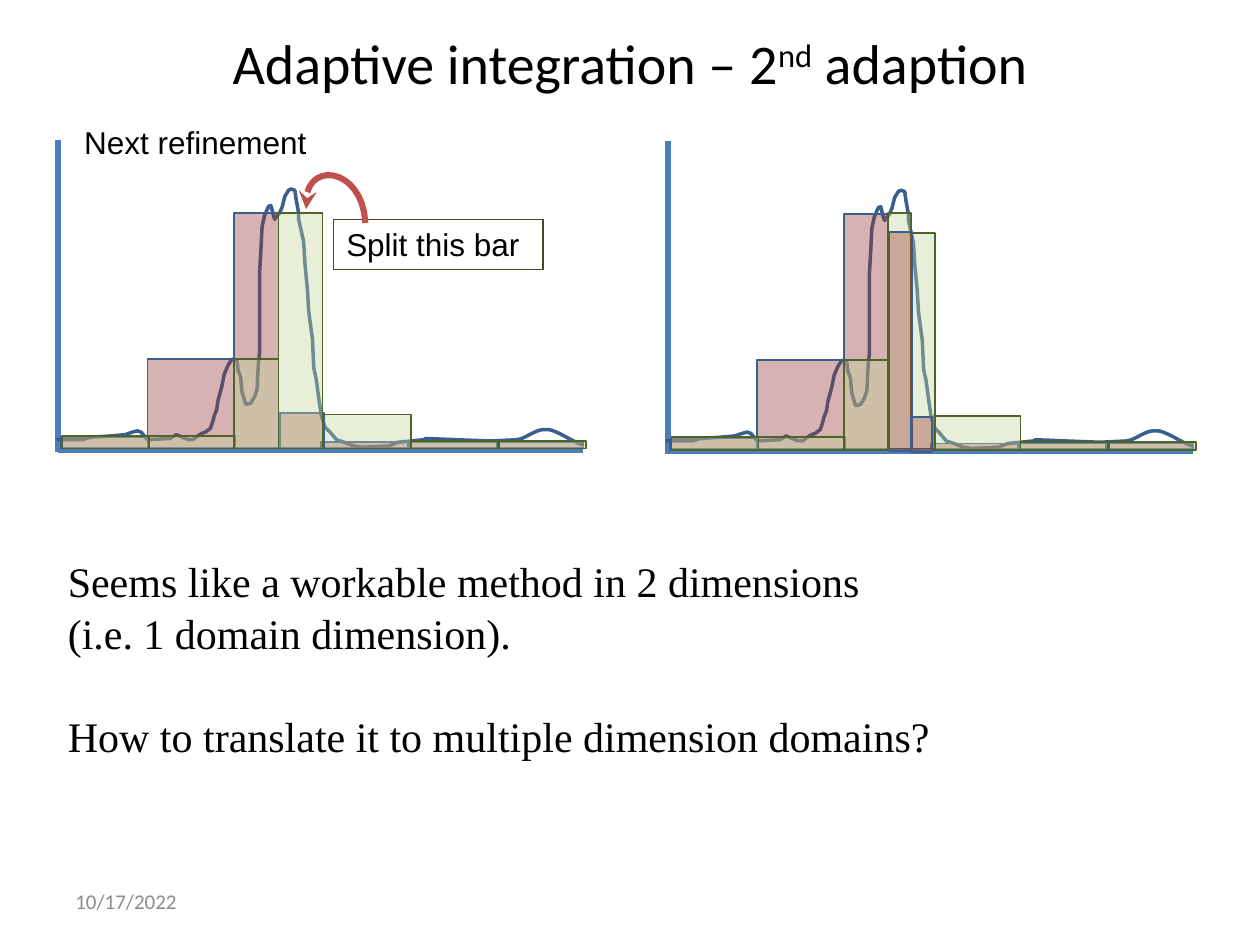
from dataclasses import dataclass
from lxml import etree
from pptx import Presentation
from pptx.dml.color import RGBColor
from pptx.enum import shapes as sh, text as tx
from pptx.oxml.ns import qn
from pptx.util import Inches, Pt

BLACK = RGBColor(0x00, 0x00, 0x00)
GREY = RGBColor(0x8C, 0x8C, 0x8C)
BROWN = RGBColor(0x4A, 0x45, 0x2A)
AXIS = RGBColor(0x4B, 0x7E, 0xBC)
BLUE = RGBColor(0x3A, 0x5F, 0x8C)
RED = RGBColor(0x95, 0x37, 0x35)
LIME = RGBColor(0xC3, 0xD6, 0x9B)
OLIVE = RGBColor(0x4F, 0x62, 0x28)
CORAL = RGBColor(0xC0, 0x50, 0x4D)

Point = tuple[float, float]


@dataclass
class Run:
    text: str
    lift: int = 0


@dataclass
class Bar:
    left: float
    top: float
    width: float
    height: float
    fill: RGBColor

    @property
    def edge(self) -> RGBColor:
        return BLUE if self.fill == RED else OLIVE


WIDE, HALF, SLIM = 0.69, 0.35, 0.18
BARS = [
    Bar(0.48, 3.47, WIDE, 0.09, RED),
    Bar(1.17, 2.85, WIDE, 0.71, RED),
    Bar(1.86, 1.69, HALF, 1.87, RED),
    *[Bar(x, 3.51, WIDE, 0.05, RED) for x in (2.55, 3.25, 3.94)],
    *[Bar(x, 3.46, WIDE, 0.1, LIME) for x in (0.49, 1.18)],
    Bar(1.86, 2.85, HALF, 0.71, LIME),
    Bar(2.57, 3.29, WIDE, 0.27, LIME),
    *[Bar(x, 3.5, WIDE, 0.06, LIME) for x in (3.26, 3.96)],
]
COARSE = [
    Bar(2.22, 3.28, HALF, 0.28, RED),
    Bar(2.21, 1.69, HALF, 1.87, LIME),
]
FINE = [
    Bar(7.24, 1.85, SLIM, 1.71, LIME),
    Bar(7.05, 1.69, SLIM, 1.87, LIME),
    Bar(7.06, 1.84, SLIM, 1.74, RED),
    Bar(7.23, 3.31, 0.17, 0.28, RED),
]


def bend(a: Point, b: Point, c: Point, d: Point, steps: int = 16) -> list[Point]:
    def mix(t: float, i: int) -> float:
        s = 1 - t
        return s**3 * a[i] + 3 * s * s * t * b[i] + 3 * s * t * t * c[i] + t**3 * d[i]

    return [(mix(n / steps, 0), mix(n / steps, 1)) for n in range(steps + 1)]


WAVE = [
    (0.44, 3.49), (0.65, 3.49), (0.72, 3.47), (0.88, 3.46), (0.99, 3.45),
    (1.05, 3.43), (1.09, 3.42), (1.12, 3.43), (1.17, 3.49), (1.35, 3.48),
    (1.4, 3.45), (1.47, 3.48), (1.5, 3.49), (1.53, 3.49), (1.57, 3.46),
    (1.6, 3.44), (1.63, 3.43), (1.67, 3.4), (1.69, 3.34), (1.7, 3.3),
    (1.72, 3.25), (1.73, 3.18), (1.76, 3.07), (1.78, 2.97), (1.81, 2.9),
    (1.84, 2.85), (1.88, 2.86), (1.89, 2.94), (1.91, 2.99), (1.92, 3.11),
    (1.93, 3.14), (1.95, 3.21), (1.99, 3.2), (2.02, 3.15), (2.04, 3.09),
    (2.05, 2.89), (2.06, 2.8), (2.06, 2.17), (2.07, 1.99), (2.08, 1.8),
    (2.1, 1.71), (2.13, 1.64), (2.15, 1.63), (2.17, 1.71), (2.18, 1.74),
    (2.22, 1.69), (2.24, 1.64), (2.26, 1.56), (2.29, 1.51), (2.31, 1.5),
    (2.34, 1.51), (2.35, 1.58), (2.37, 1.69), (2.37, 1.74), (2.41, 1.92),
    (2.42, 2.09), (2.44, 2.3), (2.45, 2.47), (2.47, 2.62), (2.48, 2.69),
    (2.49, 2.92), (2.51, 3.01), (2.53, 3.16), (2.55, 3.3), (2.58, 3.39),
    (2.62, 3.43), (2.67, 3.49), (2.73, 3.51), (2.81, 3.54), (2.87, 3.55),
    (3.08, 3.54), (3.16, 3.51), (3.26, 3.5), (3.36, 3.49), (3.38, 3.48),
    (3.62, 3.49), (3.89, 3.5),
    *bend((4.1, 3.49), (4.18, 3.48), (4.25, 3.4), (4.34, 3.41)),
    *bend((4.34, 3.41), (4.4, 3.4), (4.58, 3.53), (4.63, 3.53)),
]


def write(box, *paras: list[Run], font: str, size: float, color=BLACK,
          align=tx.PP_ALIGN.LEFT, anchor=tx.MSO_ANCHOR.TOP,
          gap: float = 0, pitch: float = 1.0) -> None:
    frame = box.text_frame
    frame.word_wrap = True
    frame.vertical_anchor = anchor
    for n, runs in enumerate(paras):
        para = frame.add_paragraph() if n else frame.paragraphs[0]
        para.alignment = align
        para.line_spacing = pitch
        para.space_before = Pt(gap if n else 0)
        for part in runs:
            run = para.add_run()
            run.text = part.text
            run.font.name = font
            run.font.size = Pt(size)
            run.font.color.rgb = color
            if part.lift:
                run._r.get_or_add_rPr().set("baseline", str(part.lift * 1000))


def label(slide, x: float, y: float, w: float, h: float):
    return slide.shapes.add_textbox(Inches(x), Inches(y), Inches(w), Inches(h))


def rect(slide, x: float, y: float, w: float, h: float, edge: RGBColor, weight: float):
    box = slide.shapes.add_shape(sh.MSO_SHAPE.RECTANGLE, Inches(x), Inches(y), Inches(w), Inches(h))
    box.shadow.inherit = False
    box.fill.background()
    box.line.color.rgb = edge
    box.line.width = Pt(weight)
    return box


def draw(slide, bar: Bar, dx: float = 0, dy: float = 0) -> None:
    box = rect(slide, bar.left + dx, bar.top + dy, bar.width, bar.height, bar.edge, 1)
    box.fill.solid()
    box.fill.fore_color.rgb = bar.fill
    tint = box._element.spPr.find(qn("a:solidFill")).find(qn("a:srgbClr"))
    etree.SubElement(tint, qn("a:alpha"), val="38000")


def axis(slide, start: Point, end: Point) -> None:
    line = slide.shapes.add_connector(sh.MSO_CONNECTOR.STRAIGHT, *map(Inches, start + end))
    line.line.color.rgb = AXIS
    line.line.width = Pt(3.75)
    etree.SubElement(line._element.spPr, qn("a:effectLst"))


def curve(slide, points: list[Point], color: RGBColor, weight: float):
    spots = [(Inches(x), Inches(y)) for x, y in points]
    build = slide.shapes.build_freeform(*spots[0])
    build.add_line_segments(spots[1:], close=False)
    shape = build.convert_to_shape()
    shape.shadow.inherit = False
    shape.fill.background()
    shape.line.color.rgb = color
    shape.line.width = Pt(weight)
    return shape


def plot(slide, extra: list[Bar], dx: float = 0, dy: float = 0) -> None:
    foot = (0.46 + dx, 3.57 + dy)
    axis(slide, (foot[0], 1.11 + dy), (foot[0], 3.59 + dy))
    axis(slide, (4.63 + dx, foot[1]), foot)
    curve(slide, [(x + dx, y + dy) for x, y in WAVE], BLUE, 2)
    for bar in BARS:
        draw(slide, bar, dx, dy)
    for bar in extra:
        draw(slide, bar)


def main() -> None:
    deck = Presentation()
    deck.slide_width, deck.slide_height = Inches(10), Inches(7.5)
    slide = deck.slides.add_slide(deck.slide_layouts[6])
    mid = tx.MSO_ANCHOR.MIDDLE
    write(label(slide, 0.5, 0.35, 9, 0.28),
          [Run("Adaptive integration – 2"), Run("nd", 30), Run(" adaption")],
          font="Calibri", size=32, align=tx.PP_ALIGN.CENTER, anchor=mid)
    write(label(slide, 0.5, 6.95, 2.33, 0.4), [Run("10/17/2022")],
          font="Calibri", size=12, color=GREY, anchor=mid)
    write(rect(slide, 2.65, 1.74, 1.66, 0.4, BROWN, 0.75), [Run("Split this bar")],
          font="Arial", size=18)
    plot(slide, COARSE)
    write(label(slide, 0.57, 0.93, 2.03, 0.4), [Run("Next refinement")], font="Arial", size=18)
    arrow = curve(slide, bend((2.9, 1.77), (2.88, 1.31), (2.39, 1.26), (2.43, 1.66)), CORAL, 3.5)
    etree.SubElement(arrow.line._get_or_add_ln(), qn("a:tailEnd"), type="stealth")
    plot(slide, FINE, 4.84, 0.01)
    write(label(slide, 0.44, 4.34, 7.07, 1.72),
          [Run("Seems like a workable method in 2 dimensions (i.e. 1 domain dimension).")],
          [Run("How to translate it to multiple dimension domains?")],
          font="Times New Roman", size=24, gap=28.8, pitch=1.04)
    deck.save("out.pptx")


if __name__ == "__main__":
    main()
